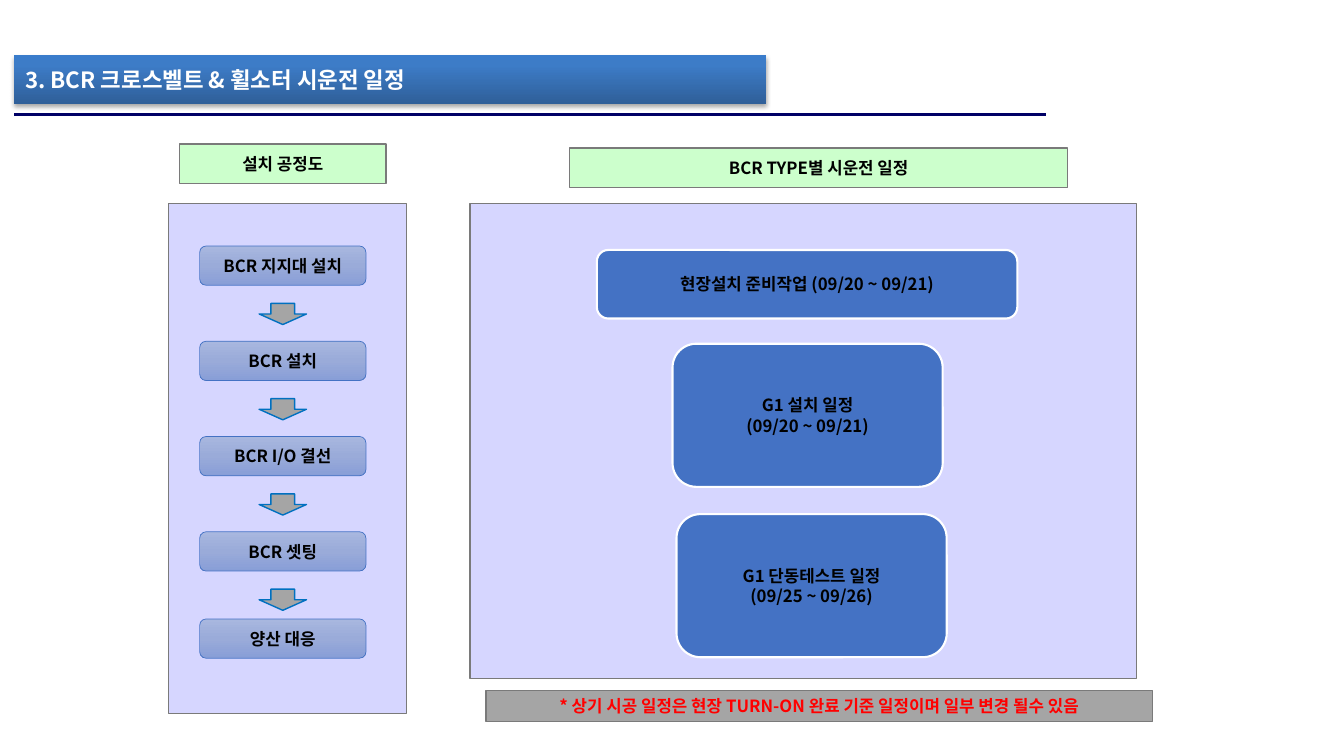
from dataclasses import dataclass

from lxml import etree
from pptx import Presentation
from pptx.dml.color import RGBColor
from pptx.enum.shapes import MSO_CONNECTOR, MSO_SHAPE
from pptx.enum.text import MSO_ANCHOR, MSO_AUTO_SIZE, PP_ALIGN
from pptx.oxml.ns import qn
from pptx.util import Inches, Pt

RECT = MSO_SHAPE.RECTANGLE
ROUND = MSO_SHAPE.ROUNDED_RECTANGLE
DOWN = MSO_SHAPE.DOWN_ARROW
STRAIGHT = MSO_CONNECTOR.STRAIGHT
MIDDLE = MSO_ANCHOR.MIDDLE
LEFT, CENTER = PP_ALIGN.LEFT, PP_ALIGN.CENTER
NO_FIT = MSO_AUTO_SIZE.NONE


@dataclass(frozen=True)
class Theme:
    font: str = "Noto Sans CJK KR"
    title: int = 16
    body: int = 12
    black: str = "000000"
    white: str = "FFFFFF"
    red: str = "FF0000"
    navy: str = "000066"
    panel: str = "3333FF"
    green: str = "CCFFCC"
    gray: str = "A5A5A5"
    edge: str = "7A7A7A"
    blue: str = "4472C4"
    sky: str = "0070C0"
    bar: tuple = ((0, "2F5F99"), (80, "3D7CC7"), (100, "3A7CCB"))
    step: tuple = ((0, "A8B7DF"), (50, "9AABD9"), (100, "889ED7"))


THEME = Theme()


def rgb(code):
    return RGBColor.from_string(code)


def add(parent, tag, **attrs):
    node = etree.SubElement(parent, qn(tag))
    for name, value in attrs.items():
        node.set(name, str(value))
    return node


def blend(shape, stops, angle):
    """Fill with a linear gradient of (percent, colour) stops."""
    shape.fill.gradient()
    grad = shape._element.spPr.find(qn("a:gradFill"))
    for child in list(grad):
        grad.remove(child)
    row = add(grad, "a:gsLst")
    for pos, code in stops:
        stop = add(row, "a:gs", pos=pos * 1000)
        add(stop, "a:srgbClr", val=code)
    add(grad, "a:lin", ang=angle * 60000, scaled=0)


def write(shape, text, size=THEME.body, color=THEME.black, align=CENTER, side=0, edge=0.05):
    frame = shape.text_frame
    frame.text = text
    frame.word_wrap = True
    frame.auto_size = NO_FIT
    frame.vertical_anchor = MIDDLE
    frame.margin_left = frame.margin_right = Inches(side)
    frame.margin_top = frame.margin_bottom = Inches(edge)
    for para in frame.paragraphs:
        para.alignment = align
        para.line_spacing = 1.0
        for run in para.runs:
            font = run.font
            font.name, font.size, font.bold = THEME.font, Pt(size), True
            font.color.rgb = rgb(color)
            add(run._r.get_or_add_rPr(), "a:ea", typeface=THEME.font)


def draw(slide, kind, box, fill, line, width=1):
    shape = slide.shapes.add_shape(kind, *map(Inches, box))
    shape.shadow.inherit = False
    if isinstance(fill, tuple):
        blend(shape, fill, 90)
    else:
        shape.fill.solid()
        shape.fill.fore_color.rgb = rgb(fill)
    shape.line.color.rgb = rgb(line)
    shape.line.width = Pt(width)
    return shape


def panel(slide, box):
    shape = draw(slide, RECT, box, THEME.panel, THEME.edge)
    color = shape._element.spPr.find(qn("a:solidFill"))[0]
    add(color, "a:alpha", val=20000)


def label(slide, box, text, fill=THEME.green, color=THEME.black):
    write(draw(slide, RECT, box, fill, THEME.edge), text, color=color)


def header(slide, box, text):
    x, y, w, h = box
    bar = slide.shapes.title
    bar.left, bar.top, bar.width, bar.height = map(Inches, box)
    blend(bar, THEME.bar, 270)
    bar.line.fill.background()
    bar.shadow.inherit = False
    glow = add(bar._element.spPr.find(qn("a:effectLst")), "a:outerShdw",
               blurRad=Pt(3.1), dist=Pt(1.8), dir=5400000, rotWithShape=0)
    add(add(glow, "a:srgbClr", val=THEME.black), "a:alpha", val=35000)
    write(bar, text, THEME.title, THEME.white, LEFT, 0.11, 0.07)

    level = Inches(y + h + 0.11)
    rule = slide.shapes.add_connector(STRAIGHT, Inches(x), level, Inches(x + 10.23), level)
    rule.line.color.rgb = rgb(THEME.navy)
    rule.line.width = Pt(2.25)
    add(rule._element.spPr, "a:effectLst")


def process(slide, box, title, steps):
    """Column of steps, each followed by an arrow down to the next."""
    x, y, w, h = box
    panel(slide, box)
    label(slide, (x + 0.11, y - 0.59, 2.05, 0.39), title)
    pitch, last = 0.945, len(steps) - 1
    for i, text in enumerate(steps):
        top = y + 0.42 + i * pitch
        if i == last:
            top -= 0.08
        node = draw(slide, ROUND, (x + 0.31, top, 1.65, 0.39), THEME.step, THEME.blue, 0.5)
        write(node, text)
        if i < last:
            draw(slide, DOWN, (x + 0.9, top + 0.57, 0.47, 0.21), THEME.gray, THEME.sky)


def schedule(slide, box, title, tasks, note):
    """Panel of tasks, each with its own box inside the panel."""
    x, y, w, h = box
    panel(slide, box)
    label(slide, (x + 0.99, y - 0.55, 4.94, 0.39), title)
    for (dx, dy, wide, high), text in tasks:
        card = draw(slide, ROUND, (x + dx, y + dy, wide, high), THEME.blue, THEME.white, 1.5)
        write(card, text)
    label(slide, (x + 0.16, y + h + 0.12, w, 0.31), note, THEME.gray, THEME.red)


def main():
    deck = Presentation()
    deck.slide_width, deck.slide_height = Inches(13.33), Inches(7.5)
    slide = deck.slides.add_slide(deck.slide_layouts[5])
    header(slide, (0.14, 0.55, 7.46, 0.48), "3. BCR 크로스벨트 & 휠소터 시운전 일정")
    process(slide, (1.67, 2.02, 2.36, 5.06), "설치 공정도",
            ("BCR 지지대 설치", "BCR 설치", "BCR I/O 결선", "BCR 셋팅", "양산 대응"))
    tasks = (
        ((1.26, 0.46, 4.17, 0.68), "현장설치 준비작업 (09/20 ~ 09/21)"),
        ((2.01, 1.39, 2.68, 1.42), "G1 설치 일정\n(09/20 ~ 09/21)"),
        ((2.05, 3.08, 2.68, 1.42), "G1 단동테스트 일정\n(09/25 ~ 09/26)"),
    )
    schedule(slide, (4.66, 2.02, 6.61, 4.71), "BCR TYPE별 시운전 일정", tasks,
             "* 상기 시공 일정은 현장 TURN-ON 완료 기준 일정이며 일부 변경 될수 있음")
    deck.save("out.pptx")


if __name__ == "__main__":
    main()
